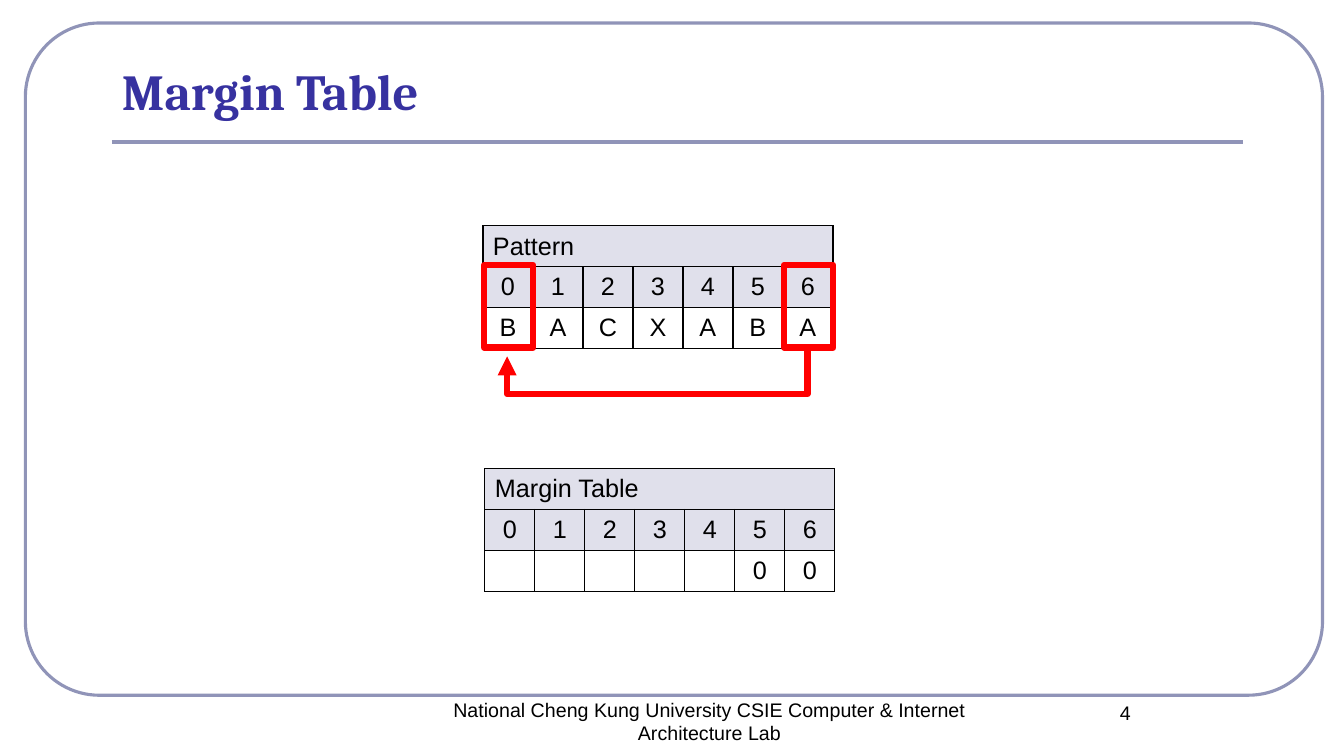
from lxml.etree import SubElement
from pptx import Presentation
from pptx.dml.color import RGBColor
from pptx.enum.shapes import MSO_CONNECTOR, MSO_SHAPE
from pptx.enum.text import MSO_ANCHOR, PP_ALIGN
from pptx.oxml.ns import qn
from pptx.util import Cm, Pt

LAVENDER, INDIGO, PALE, RED, BLACK = "9094B8", "3732A0", "E0E0EB", "FF0000", "000000"
COLUMN, ROW = 1.26, 1.03
PATTERN_LEFT, PATTERN_TOP = 12.17, 5.69


def rgb(value):
    return RGBColor.from_string(value)


def write(frame, text, size=18, font="Arial", color=BLACK, bold=False,
          align=PP_ALIGN.LEFT, anchor=MSO_ANCHOR.TOP):
    frame.word_wrap = True
    frame.vertical_anchor = anchor
    paragraph = frame.paragraphs[0]
    paragraph.alignment = align
    run = paragraph.add_run()
    run.text = text
    run.font.size, run.font.name, run.font.bold = Pt(size), font, bold
    run.font.color.rgb = rgb(color)


def border(cell):
    """Draw a thin black line on all four sides of a cell."""
    properties = cell._tc.get_or_add_tcPr()
    for position, side in enumerate(("lnL", "lnR", "lnT", "lnB")):
        edge = SubElement(properties, qn(f"a:{side}"), w=str(Pt(1)))
        solid = SubElement(edge, qn("a:solidFill"))
        SubElement(solid, qn("a:srgbClr"), val=BLACK)
        properties.insert(position, edge)


class MarginSlide:
    def __init__(self, deck):
        self.slide = deck.slides.add_slide(deck.slide_layouts[5])
        self.shapes = self.slide.shapes

    def title(self, text, left, top, width, height):
        heading = self.shapes.title
        heading.left, heading.top = Cm(left), Cm(top)
        heading.width, heading.height = Cm(width), Cm(height)
        write(heading.text_frame, text, size=36, font="Cambria", color=INDIGO,
              bold=True, anchor=MSO_ANCHOR.BOTTOM)

    def label(self, text, left, top, width, height):
        box = self.shapes.add_textbox(Cm(left), Cm(top), Cm(width), Cm(height))
        write(box.text_frame, text, size=14, align=PP_ALIGN.CENTER)

    def outline(self, kind, left, top, width, height, color, weight):
        shape = self.shapes.add_shape(kind, Cm(left), Cm(top), Cm(width), Cm(height))
        shape.shadow.inherit = False
        shape.fill.background()
        shape.line.color.rgb, shape.line.width = rgb(color), Pt(weight)
        SubElement(shape.line._get_or_add_ln(), qn("a:round"))
        return shape

    def connector(self, kind, start, end, color, weight):
        line = self.shapes.add_connector(kind, *map(Cm, start + end))
        line.line.color.rgb, line.line.width = rgb(color), Pt(weight)
        SubElement(line.line._get_or_add_ln(), qn("a:round"))
        SubElement(line._element.spPr, qn("a:effectLst"))
        return line

    def return_arrow(self, start, end, bottom):
        """Arrow that drops from start to bottom, runs left and rises to end."""
        middle_x, middle_y = (start[0] + end[0]) / 2, (start[1] + end[1]) / 2
        rise, run = end[1] - start[1], start[0] - end[0]
        arrow = self.connector(
            MSO_CONNECTOR.ELBOW,
            (middle_x - rise / 2, middle_y - run / 2),
            (middle_x + rise / 2, middle_y + run / 2), RED, 4.5)
        properties = arrow._element.spPr
        properties.find(qn("a:xfrm")).set("rot", "5400000")
        guides = properties.find(qn("a:prstGeom")).get_or_add_avLst()
        bend = round((bottom - start[1]) / rise * 100000)
        SubElement(guides, qn("a:gd"), name="adj1", fmla=f"val {bend}")
        SubElement(arrow.line._get_or_add_ln(), qn("a:tailEnd"), type="triangle")

    def index_table(self, caption, values, left, top):
        """Table with a caption row, an index row and a row of values."""
        count = len(values)
        table = self.shapes.add_table(3, count, Cm(left), Cm(top),
                                      Cm(COLUMN * count), Cm(ROW * 3)).table
        table.first_row = table.horz_banding = False
        for column in table.columns:
            column.width = Cm(COLUMN)
        rows = [[caption] + [""] * (count - 1), map(str, range(count)), values]
        for row, texts in enumerate(rows):
            table.rows[row].height = Cm(ROW)
            for column, text in enumerate(texts):
                cell = table.cell(row, column)
                if row < 2:
                    cell.fill.solid()
                    cell.fill.fore_color.rgb = rgb(PALE)
                else:
                    cell.fill.background()
                border(cell)
                cell.vertical_anchor = MSO_ANCHOR.MIDDLE
                if text:
                    write(cell.text_frame, text, anchor=MSO_ANCHOR.MIDDLE,
                          align=PP_ALIGN.CENTER if row else PP_ALIGN.LEFT)
        table.cell(0, 0).merge(table.cell(0, count - 1))


def main():
    deck = Presentation()
    deck.slide_width, deck.slide_height = Cm(33.87), Cm(19.05)
    page = MarginSlide(deck)

    frame = page.outline(MSO_SHAPE.ROUNDED_RECTANGLE, 0.64, 0.58, 32.69, 16.94, LAVENDER, 2.25)
    frame.adjustments[0] = 0.11
    page.connector(MSO_CONNECTOR.STRAIGHT, (2.82, 3.58), (31.32, 3.58), LAVENDER, 3)
    page.title("Margin Table", 2.82, 1.52, 28.5, 1.65)
    page.label("National Cheng Kung University CSIE Computer & Internet Architecture Lab",
               10.54, 17.45, 14.68, 1.27)
    page.label("4", 25.4, 17.53, 5.92, 1.27)

    page.index_table("Pattern", list("BACXABA"), PATTERN_LEFT, PATTERN_TOP)
    page.index_table("Margin Table", [""] * 5 + ["0", "0"], 12.22, 11.81)

    for index in (6, 0):
        page.outline(MSO_SHAPE.RECTANGLE, PATTERN_LEFT + index * COLUMN + 0.03,
                     6.68, 1.24, 2.08, RED, 4.5)
    page.return_arrow((20.35, 8.79), (12.78, 8.98), 9.93)
    deck.save("out.pptx")


if __name__ == "__main__":
    main()
